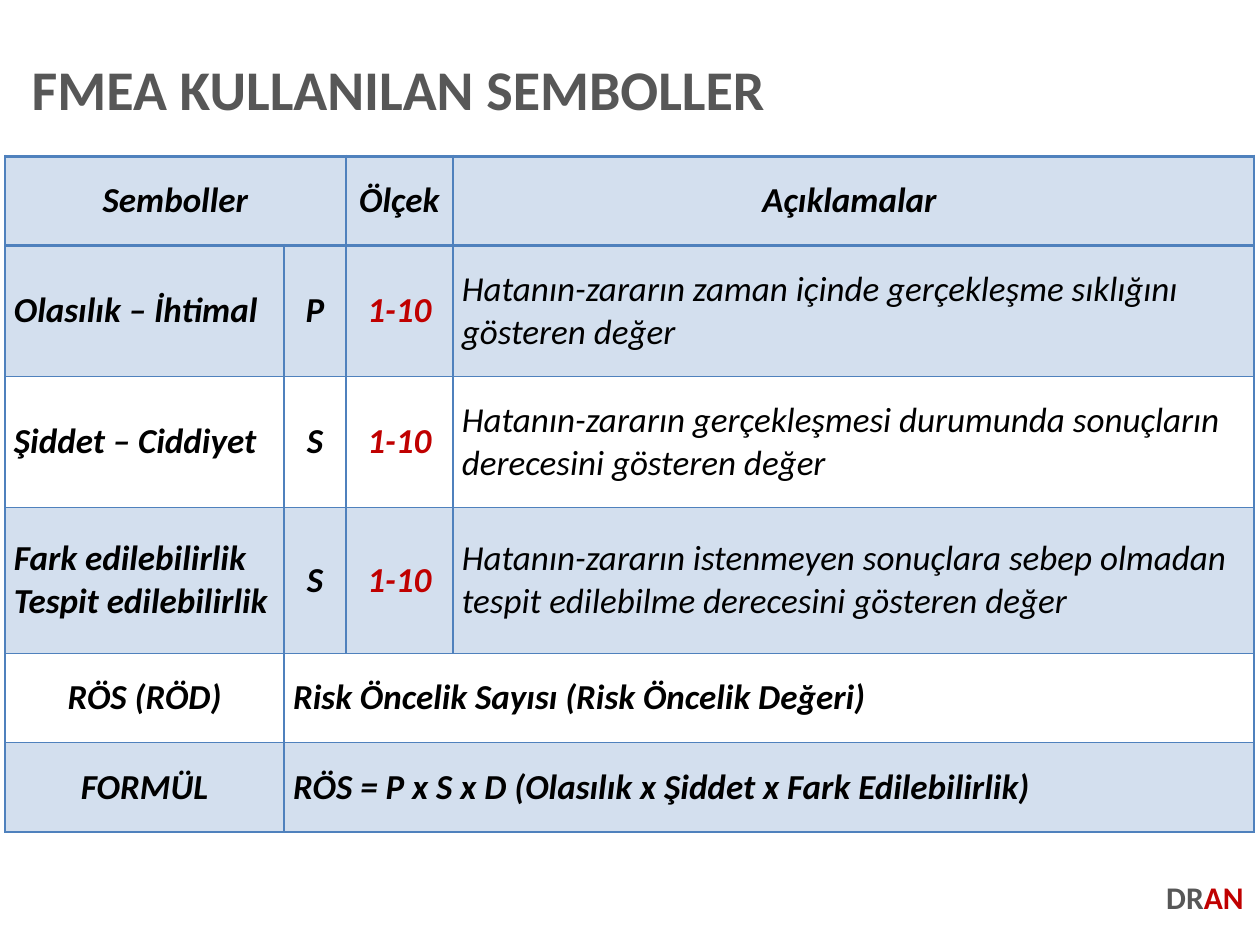
from lxml import etree
from pptx import Presentation
from pptx.dml.color import RGBColor
from pptx.enum import text
from pptx.oxml.ns import qn
from pptx.util import Cm, Pt

BLUE, PALE, RED, BLACK, GREY = "4F81BD", "D3DFEE", "C00000", "000000", "575757"
LEFT, CENTER, RIGHT = text.PP_ALIGN.LEFT, text.PP_ALIGN.CENTER, text.PP_ALIGN.RIGHT


def rgb(value):
    return RGBColor.from_string(value)


def add_run(p, words, size, color, bold=True, italic=False):
    r = p.add_run()
    r.text = words
    r.font.name = "Calibri"
    r.font.size = Pt(size)
    r.font.bold = bold
    r.font.italic = italic
    r.font.color.rgb = rgb(color)


prs = Presentation()
prs.slide_width, prs.slide_height = Cm(25.4), Cm(19.05)
s = prs.slides.add_slide(prs.slide_layouts[6])

rows = [
    ["Semboller", None, "Ölçek", "Açıklamalar "],
    ["Olasılık – İhtimal", "P", "1-10",
     "Hatanın-zararın zaman içinde gerçekleşme sıklığını gösteren değer"],
    ["Şiddet – Ciddiyet", "S", "1-10",
     "Hatanın-zararın gerçekleşmesi durumunda sonuçların derecesini gösteren değer"],
    ["Fark edilebilirlik\nTespit edilebilirlik", "S", "1-10",
     "Hatanın-zararın istenmeyen sonuçlara sebep olmadan tespit edilebilme derecesini gösteren değer"],
    ["RÖS (RÖD)", "Risk Öncelik Sayısı (Risk Öncelik Değeri)", None, None],
    ["FORMÜL", "RÖS = P x S x D (Olasılık x Şiddet x Fark Edilebilirlik)", None, None],
]
widths = [5.63, 1.24, 2.16, 16.15]
heights = [1.8, 2.64, 2.64, 2.94, 1.8, 1.8]

table = s.shapes.add_table(len(rows), len(widths), Cm(0.1), Cm(3.15),
                           Cm(sum(widths)), Cm(sum(heights))).table
for column, width in zip(table.columns, widths):
    column.width = Cm(width)
for row, height in zip(table.rows, heights):
    row.height = Cm(height)
table.cell(0, 0).merge(table.cell(0, 1))
for i in (4, 5):
    table.cell(i, 1).merge(table.cell(i, 3))

for i, row in enumerate(rows):
    measured = 1 <= i <= 3
    for j, words in enumerate(row):
        cell = table.cell(i, j)
        cell.vertical_anchor = text.MSO_ANCHOR.MIDDLE
        cell.margin_left = cell.margin_right = Cm(0.18)
        cell.margin_top = cell.margin_bottom = 0
        tcPr = cell._tc.get_or_add_tcPr()
        for side in "LRTB":
            thick = (i == 0 and side in "TB") or (i == 1 and side == "T")
            ln = etree.SubElement(tcPr, qn(f"a:ln{side}"), w=str(Pt(2.25 if thick else 1)))
            fill = etree.SubElement(ln, qn("a:solidFill"))
            etree.SubElement(fill, qn("a:srgbClr"), val=BLUE)
        if i in (0, 1, 3, 5):
            cell.fill.solid()
            cell.fill.fore_color.rgb = rgb(PALE)
        else:
            cell.fill.background()
        if words is None:
            continue
        centered = i == 0 or (j in (1, 2) if measured else j == 0)
        tf = cell.text_frame
        for n, line in enumerate(words.split("\n")):
            p = tf.add_paragraph() if n else tf.paragraphs[0]
            p.alignment = CENTER if centered else LEFT
            add_run(p, line, 20, RED if measured and j == 2 else BLACK,
                    bold=not (measured and j == 3), italic=True)

boxes = [
    (0.64, 0.97, 24.49, 1.8, 0.13, text.MSO_ANCHOR.MIDDLE, LEFT, 0.9, 32,
     [("FMEA KULLANILAN SEMBOLLER", GREY)]),
    (23.37, 17.7, 1.7, 1.42, 0, text.MSO_ANCHOR.TOP, RIGHT, 1.0, 18,
     [("DR", GREY), ("AN", RED)]),
]
for left, top, width, height, inset, anchor, align, spacing, size, runs in boxes:
    tf = s.shapes.add_textbox(Cm(left), Cm(top), Cm(width), Cm(height)).text_frame
    tf.word_wrap = True
    tf.vertical_anchor = anchor
    tf.margin_left = tf.margin_right = 0
    tf.margin_top = tf.margin_bottom = Cm(inset)
    p = tf.paragraphs[0]
    p.alignment = align
    p.line_spacing = spacing
    for words, color in runs:
        add_run(p, words, size, color)

prs.save("out.pptx")
